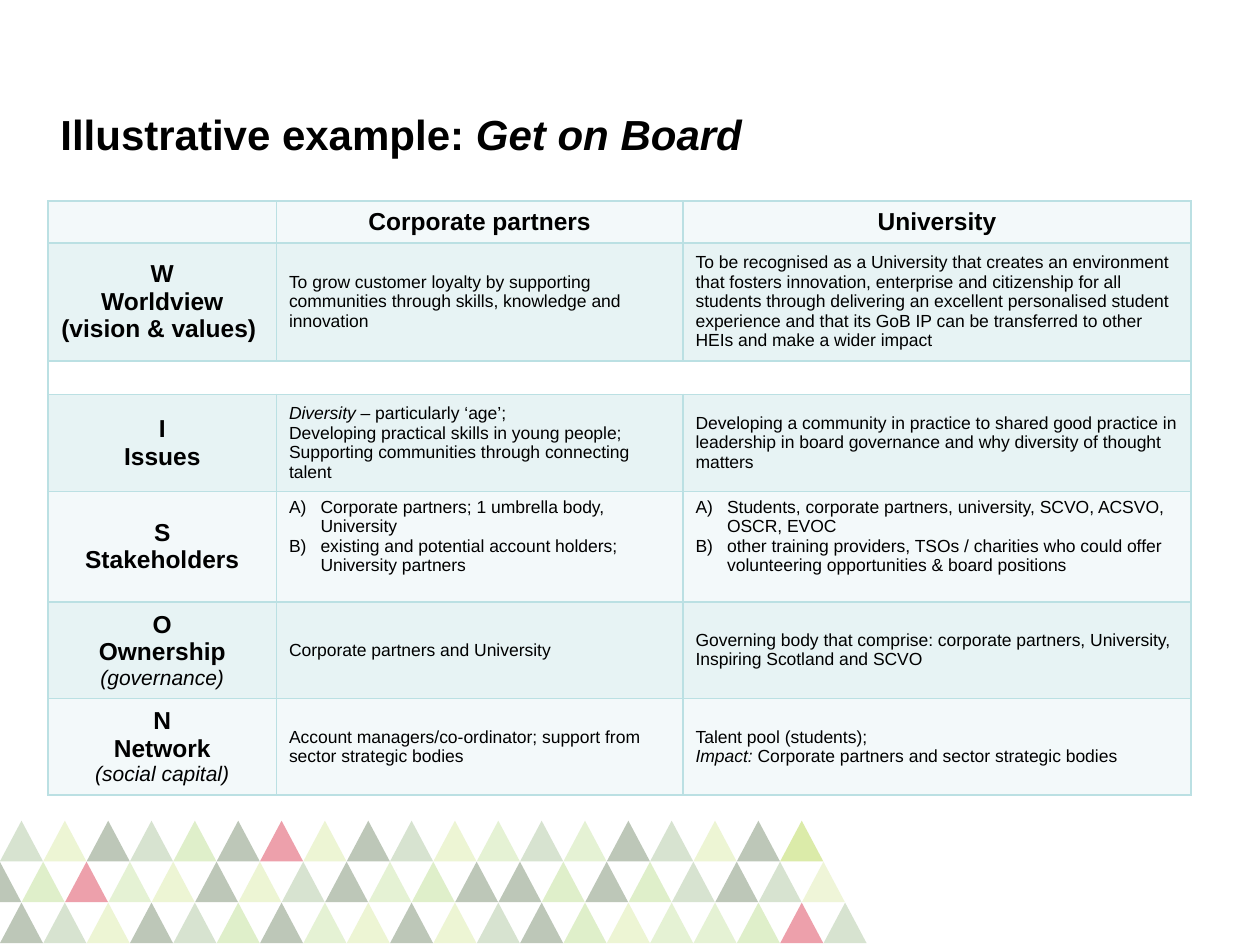
from lxml import etree
from pptx import Presentation
from pptx.dml.color import RGBColor
from pptx.enum import shapes, text
from pptx.oxml import ns
from pptx.util import Pt

COLORS = {
    "text": "000000", "border": "BBE0E3", "pale": "F3F9FA", "tint": "E7F3F4",
    "lime": "A7CD28", "leaf": "81C12C", "moss": "4A812C", "pine": "264715", "red": "D3122E",
}
# Triangle code: colour name and opacity in percent
TINTS = {
    "A": ("lime", 20), "a": ("lime", 18), "Y": ("lime", 40), "C": ("leaf", 25),
    "c": ("leaf", 20), "M": ("moss", 22), "D": ("pine", 30), "R": ("red", 40),
}
# Left offset in triangle steps, and the codes from left to right
TRIANGLE_ROWS = [
    (0, "MADMCDRADMAcMcDMADY"),
    (-0.5, "DCRcADAMDcCDDCDCMDMa"),
    (0, "DMADMCDcADAMDCAccCRM"),
]
COLUMN_WIDTHS = [130.5, 232.3, 290.3]
SUBLABEL = dict(size=12, bold=False, italic=True)

# Row height, fill, then cells as lists of lines; *stars* mark italics
TABLE_ROWS = [
    (22.9, "pale", [[], ["Corporate partners"], ["University"]]),
    (63, "tint", [
        ["W", "Worldview", "(vision & values) "],
        ["To grow customer loyalty by supporting communities through skills, knowledge "
         "and innovation"],
        ["To be recognised as a University that creates an environment that fosters "
         "innovation, enterprise and citizenship for all students through delivering an "
         "excellent personalised student experience and that its GoB IP can be transferred "
         "to other HEIs and make a wider impact"]]),
    (18.4, None, [[], [], []]),
    (52, "tint", [
        ["I", "Issues"],
        ["*Diversity* – particularly ‘age’;",
         "Developing practical skills in young people;",
         "Supporting communities through connecting talent"],
        ["Developing a community in practice to shared good practice in leadership in board "
         "governance and why diversity of thought matters"]]),
    (63.2, "pale", [
        ["S", "Stakeholders"],
        ["Corporate partners; 1 umbrella body, University",
         "existing and potential account holders; University partners"],
        ["Students, corporate partners, university, SCVO, ACSVO, OSCR, EVOC",
         "other training providers, TSOs / charities who could offer volunteering "
         "opportunities & board positions"]]),
    (52, "tint", [
        ["O", "Ownership", ("(governance)", SUBLABEL)],
        ["Corporate partners and University"],
        ["Governing body that comprise: corporate partners, University, Inspiring Scotland "
         "and SCVO"]]),
    (52.2, "pale", [
        ["N", "Network", ("(social capital)", SUBLABEL)],
        ["Account managers/co-ordinator; support from sector strategic bodies"],
        ["Talent pool (students);",
         "*Impact: *Corporate partners and sector strategic bodies"]]),
]
HEADER_ROW, SPACER_ROW, LETTERED_ROW = 0, 2, 4


def rgb(name):
    return RGBColor.from_string(COLORS[name])


def child(parent, tag, **attributes):
    return etree.SubElement(parent, ns.qn(tag), attributes)


def write(frame, lines, size=10, bold=False, italic=False, centred=False, lettered=False):
    """Fill a text frame; a line is text, or text with its own format."""
    for index, line in enumerate(lines):
        words, own = line if isinstance(line, tuple) else (line, {})
        style = dict(size=size, bold=bold, italic=italic) | own
        paragraph = frame.paragraphs[0] if index == 0 else frame.add_paragraph()
        paragraph.alignment = text.PP_ALIGN.CENTER if centred else text.PP_ALIGN.LEFT
        if lettered:
            properties = paragraph._p.get_or_add_pPr()
            properties.set("marL", str(Pt(18)))
            properties.set("indent", str(-Pt(18)))
            child(properties, "a:buFont", typeface="+mj-lt")
            child(properties, "a:buAutoNum", type="alphaUcParenR")
        for part, piece in enumerate(words.split("*")):
            if not piece:
                continue
            run = paragraph.add_run()
            run.text = piece
            run.font.name = "Arial"
            run.font.size = Pt(style["size"])
            run.font.bold = style["bold"]
            run.font.italic = style["italic"] or part % 2 == 1
            run.font.color.rgb = rgb("text")
    if not lines:  # keeps an empty cell as low as its row
        child(frame.paragraphs[0]._p, "a:endParaRPr", sz=str(size * 100))


def add_title(slide, left, top, width, height):
    frame = slide.shapes.add_textbox(Pt(left), Pt(top), Pt(width), Pt(height)).text_frame
    frame.word_wrap = True
    frame.vertical_anchor = text.MSO_ANCHOR.MIDDLE
    write(frame, ["Illustrative example: *Get on Board*"], size=24, bold=True)


def add_triangles(slide, left, top, step, row_step, width, height):
    for row, (offset, codes) in enumerate(TRIANGLE_ROWS):
        for column, code in enumerate(codes):
            triangle = slide.shapes.add_shape(
                shapes.MSO_SHAPE.ISOSCELES_TRIANGLE,
                Pt(left + (column + offset) * step), Pt(top + row * row_step),
                Pt(width), Pt(height))
            color, opacity = TINTS[code]
            triangle.shadow.inherit = False
            triangle.line.fill.background()
            triangle.fill.solid()
            triangle.fill.fore_color.rgb = rgb(color)
            solid = triangle._element.spPr.find(ns.qn("a:solidFill"))
            child(solid[0], "a:alpha", val=str(opacity * 1000))


def style_cell(cell, fill):
    properties = cell._tc.get_or_add_tcPr()
    for side in ("a:lnL", "a:lnR", "a:lnT", "a:lnB"):
        border = child(properties, side, w=str(Pt(1)))
        child(child(border, "a:solidFill"), "a:srgbClr", val=COLORS["border"])
    if fill:
        cell.fill.solid()
        cell.fill.fore_color.rgb = rgb(fill)
    else:
        cell.fill.background()


def add_partner_table(slide, left, top):
    width, height = sum(COLUMN_WIDTHS), sum(row[0] for row in TABLE_ROWS)
    table = slide.shapes.add_table(
        len(TABLE_ROWS), len(COLUMN_WIDTHS), Pt(left), Pt(top), Pt(width), Pt(height)).table
    table.first_row = table.horz_banding = False
    for column, column_width in zip(table.columns, COLUMN_WIDTHS):
        column.width = Pt(column_width)
    for row, (row_height, fill, cells) in enumerate(TABLE_ROWS):
        table.rows[row].height = Pt(row_height)
        for column, lines in enumerate(cells):
            cell = table.cell(row, column)
            style_cell(cell, fill)
            lettered = row == LETTERED_ROW and column > 0
            cell.vertical_anchor = text.MSO_ANCHOR.TOP if lettered else text.MSO_ANCHOR.MIDDLE
            heading = bool(lines) and (row == HEADER_ROW or column == 0)
            write(cell.text_frame, lines, size=14 if heading else 10, bold=heading,
                  centred=heading, lettered=lettered)
    table.cell(SPACER_ROW, 0).merge(table.cell(SPACER_ROW, len(COLUMN_WIDTHS) - 1))


def main():
    deck = Presentation()
    deck.slide_width, deck.slide_height = Pt(720), Pt(540)
    slide = deck.slides.add_slide(deck.slide_layouts[6])
    # Triangle band along the foot
    add_triangles(slide, 0, 469, step=24.77, row_step=23.4, width=24.6, height=23.2)
    # Title and table
    add_title(slide, 27.5, 49, 665, 55)
    add_partner_table(slide, 27.5, 114.8)
    deck.save("out.pptx")


if __name__ == "__main__":
    main()
